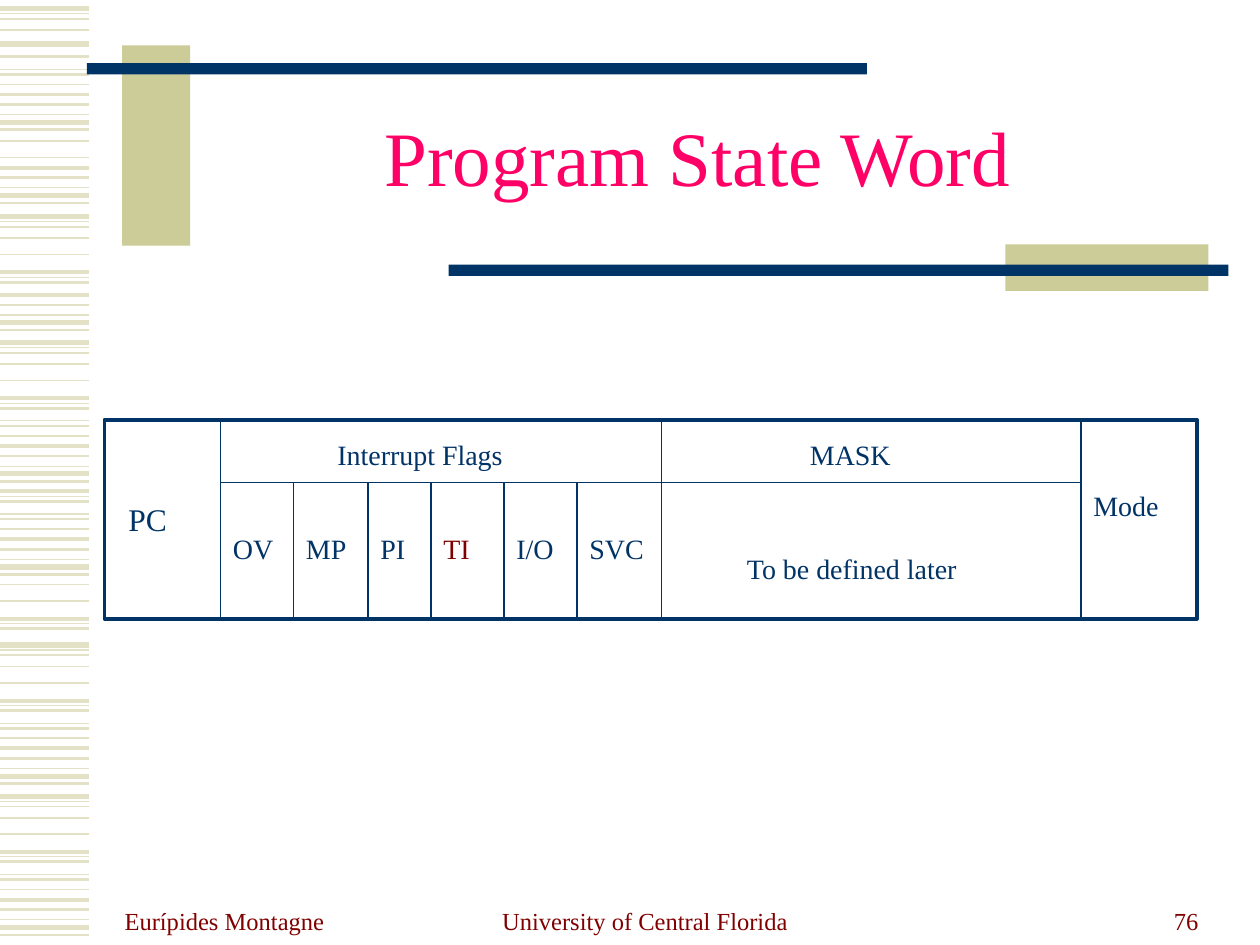
"""Build the Program State Word slide."""
from lxml.etree import SubElement
from pptx import Presentation
from pptx.dml.color import RGBColor
from pptx.enum.shapes import MSO_CONNECTOR as Connector, MSO_SHAPE as Shape
from pptx.enum.text import MSO_ANCHOR as Anchor, MSO_AUTO_SIZE as AutoSize, PP_ALIGN as Align
from pptx.oxml.ns import qn
from pptx.util import Inches, Pt

FONT = "Times New Roman"
NAVY = RGBColor(0x00, 0x33, 0x66)
KHAKI = RGBColor(0xCC, 0xCC, 0x99)
PALE_KHAKI = RGBColor(0xE3, 0xE2, 0xC7)
MAROON = RGBColor(0x80, 0x00, 0x00)
PINK = RGBColor(0xFF, 0x00, 0x66)
WHITE = RGBColor(0xFF, 0xFF, 0xFF)

STRIPE_PATTERN = [
    (0, 3), (0.04, 0.75), (0.08, 1), (0.17, 1),
    (0.3, 1), (0.44, 2.25), (0.48, 0.75), (0.52, 1.5),
    (0.62, 0.75), (0.66, 1.5), (0.74, 1), (0.82, 2.25),
    (0.9, 1.5), (0.98, 0.75), (1.04, 3), (1.1, 1.5),
]
STRIPE_BLOCKS = [
    (0.07, 0, 4), (-0.69, 14, 15), (-0.07, 7, 16), (0.82, 4, 5),
    (0.51, 10, 16), (1.72, 0, 8), (1.52, 11, 16), (2.72, 0, 16),
    (3.46, 5, 16), (4.47, 3, 8), (5.12, 0, 16), (6.32, 0, 16),
]
DECORATION = [
    (0.97, 0.36, 0.54, 1.59, KHAKI), (0.69, 0.5, 6.19, 0.09, NAVY),
    (7.98, 1.94, 1.61, 0.37, KHAKI), (3.56, 2.1, 6.19, 0.09, NAVY),
]
WORD_TOP, FLAGS_TOP, WORD_BOTTOM = 3.33, 3.83, 4.92
FLAGS_LEFT, MASK_LEFT, MODE_LEFT = 1.75, 5.25, 8.58
FLAGS = [("OV", FLAGS_LEFT), ("MP", 2.33), ("PI", 2.92), ("TI", 3.42), ("I/O", 4), ("SVC", 4.58)]
FIELD_LABELS = [
    ("Interrupt Flags", 2.58, 3.42, 1.92), ("MASK", 6.33, 3.42, 1.08),
    ("Mode", MODE_LEFT, 3.83, 1), ("To be defined later", 5.83, 4.33, 2.33),
]
FOOTERS = [
    ("Eurípides Montagne", 0.89, 2.08, Align.LEFT),
    ("University of Central Florida", 3.43, 3.38, Align.CENTER),
    ("76", 7.21, 2.4, Align.RIGHT),
]


def add_line(slide, x1, y1, x2, y2, color=NAVY, width=0.75):
    """Add a straight line without a shadow."""
    line = slide.shapes.add_connector(
        Connector.STRAIGHT, Inches(x1), Inches(y1), Inches(x2), Inches(y2))
    line.line.color.rgb = color
    line.line.width = Pt(width)
    SubElement(line._element.spPr, qn("a:effectLst"))


def add_rectangle(slide, left, top, width, height, fill, outline=None):
    """Add a filled rectangle, outlined when a colour is given."""
    shape = slide.shapes.add_shape(
        Shape.RECTANGLE, Inches(left), Inches(top), Inches(width), Inches(height))
    shape.shadow.inherit = False
    shape.fill.solid()
    shape.fill.fore_color.rgb = fill
    if outline is None:
        shape.line.fill.background()
    else:
        shape.line.color.rgb = outline
        shape.line.width = Pt(2.25)


def add_text(slide, text, left, top, width, height, size=16, color=NAVY,
             align=Align.LEFT, anchor=Anchor.TOP, line_spacing=None, grow=False):
    """Add a wrapping text box holding one paragraph."""
    box = slide.shapes.add_textbox(Inches(left), Inches(top), Inches(width), Inches(height))
    frame = box.text_frame
    frame.word_wrap = True
    frame.auto_size = AutoSize.SHAPE_TO_FIT_TEXT if grow else AutoSize.NONE
    frame.vertical_anchor = anchor
    paragraph = frame.paragraphs[0]
    paragraph.alignment = align
    paragraph.line_spacing = line_spacing
    run = paragraph.add_run()
    run.text = text
    run.font.name = FONT
    run.font.size = Pt(size)
    run.font.color.rgb = color


def add_background(slide):
    """Draw the side stripes and the bars around the title."""
    for start, first, end in STRIPE_BLOCKS:
        for offset, width in STRIPE_PATTERN[first:end]:
            add_line(slide, 0, start + offset, 0.71, start + offset, PALE_KHAKI, width)
    for left, top, width, height, fill in DECORATION:
        add_rectangle(slide, left, top, width, height, fill)


def add_state_word(slide):
    """Draw the state word with its fields and flags."""
    add_rectangle(slide, 0.83, WORD_TOP, 8.67, 1.58, WHITE, NAVY)
    for x in (FLAGS_LEFT, MASK_LEFT, MODE_LEFT):
        add_line(slide, x, WORD_TOP, x, WORD_BOTTOM)
    add_line(slide, FLAGS_LEFT, FLAGS_TOP, MODE_LEFT, FLAGS_TOP)
    for _, x in FLAGS[1:]:
        add_line(slide, x, FLAGS_TOP, x, WORD_BOTTOM)
    add_text(slide, "PC", 0.92, 3.92, 0.67, 0.4, size=18, grow=True)
    for label, left, top, width in FIELD_LABELS:
        add_text(slide, label, left, top, width, 0.37, grow=True)
    for flag, left in FLAGS:
        color = MAROON if flag == "TI" else NAVY
        add_text(slide, flag, left, 4.17, 0.75, 0.37, color=color, grow=True)


def main():
    """Build and save the slide."""
    presentation = Presentation()
    presentation.slide_width, presentation.slide_height = Inches(10), Inches(7.5)
    slide = presentation.slides.add_slide(presentation.slide_layouts[6])
    add_background(slide)
    for text, left, width, align in FOOTERS:
        add_text(slide, text, left, 6.97, width, 0.5, 14, MAROON, align, Anchor.BOTTOM)
    add_text(slide, "Program State Word", 1.5, 0.67, 8.07, 1.25, 44, PINK,
             Align.CENTER, Anchor.MIDDLE, line_spacing=0.85)
    add_state_word(slide)
    presentation.save("out.pptx")


if __name__ == "__main__":
    main()
